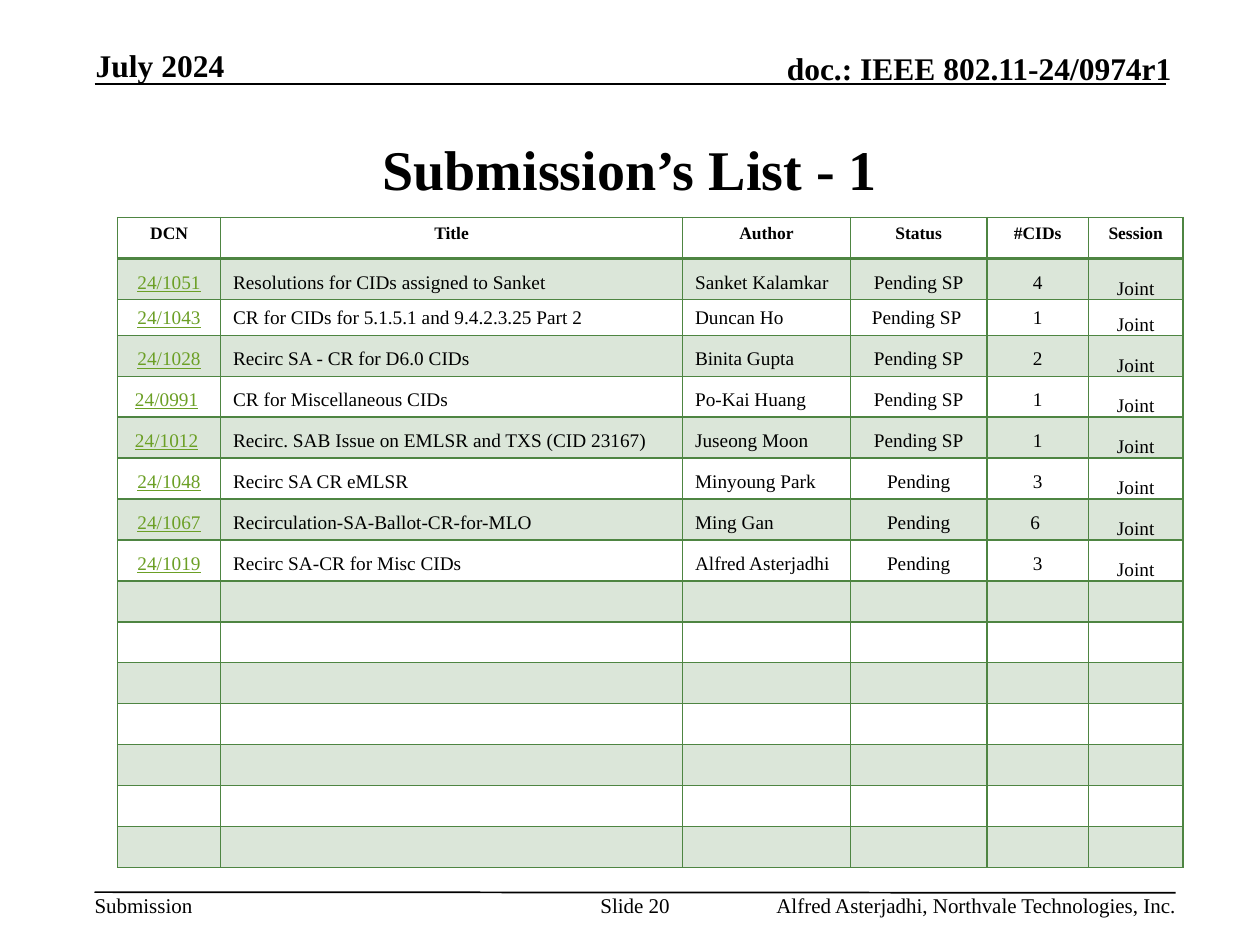
import pptx
import pptx.util
import pptx.dml.color
import pptx.enum.text
import pptx.enum.shapes
import lxml.etree

Pt = pptx.util.Pt
Align = pptx.enum.text.PP_ALIGN
Anchor = pptx.enum.text.MSO_ANCHOR
NS = "http://schemas.openxmlformats.org/drawingml/2006/main"
FONT = "Times New Roman"
BLACK, GREEN, LINK = "000000", "4E8542", "6B9F25"
LEFT, MID, RIGHT = Align.LEFT, Align.CENTER, Align.RIGHT
TOP, CORE, BASE = Anchor.TOP, Anchor.MIDDLE, Anchor.BOTTOM

RULES = [(54, 48.2, 666, 48.2), (54, 509.8, 671.8, 510.2)]
TEXTS = [
    ("Submission", (54, 509.8, 56.2, 14.4), 12, False, LEFT, TOP),
    ("doc.: IEEE 802.11-24/0974r1", (393.8, 28.1, 275.8, 21.6), 18, True, RIGHT, BASE),
    ("Submission’s List - 1", (54, 54.4, 612, 83.5), 32, True, MID, CORE),
    ("July 2024", (54.7, 26.2, 147.6, 21.6), 18, True, LEFT, BASE),
    ("Alfred Asterjadhi, Northvale Technologies, Inc.", (421.9, 509.8, 250.2, 14.4), 12, False, RIGHT, TOP),
    ("Slide 20", (342, 509.8, 41.8, 28.8), 12, False, MID, TOP),
]
HEADS = ["DCN", "Title", "Author", "Status", "#CIDs", "Session"]
ITEMS = [
    ("24/1051", "Resolutions for CIDs assigned to Sanket", "Sanket Kalamkar", "Pending SP", "4"),
    ("24/1043", "CR for CIDs for 5.1.5.1 and 9.4.2.3.25 Part 2", "Duncan Ho", "Pending SP ", "1"),
    ("24/1028", "Recirc SA - CR for D6.0 CIDs", "Binita Gupta", "Pending SP", "2"),
    ("24/0991 ", "CR for Miscellaneous CIDs", "Po-Kai Huang", "Pending SP", "1"),
    ("24/1012 ", "Recirc. SAB Issue on EMLSR and TXS (CID 23167)", "Juseong Moon", "Pending SP", "1"),
    ("24/1048", "Recirc SA CR eMLSR", "Minyoung Park", "Pending", "3"),
    ("24/1067", "Recirculation-SA-Ballot-CR-for-MLO", "Ming Gan", "Pending", "6 "),
    ("24/1019", "Recirc SA-CR for Misc CIDs", "Alfred Asterjadhi", "Pending", "3"),
]
SPARE = 7
SESSION = "Joint"
ALIGNS = [MID, LEFT, LEFT, MID, MID, MID]
WIDTHS = [58.8, 264, 96, 78, 58, 54]
TALL, SHORT, TIGHT = 23.4, 19.4, 2


def color(code):
    return pptx.dml.color.RGBColor.from_string(code)


def add_run(para, text, size, bold=False, code=BLACK, under=False):
    run = para.add_run()
    run.text = text
    font = run.font
    font.name, font.size, font.bold, font.underline = FONT, Pt(size), bold, under
    font.color.rgb = color(code)


def add_text(slide, text, area, size, bold, align, anchor):
    frame = slide.shapes.add_textbox(*map(Pt, area)).text_frame
    frame.margin_left = frame.margin_right = frame.margin_top = frame.margin_bottom = 0
    frame.word_wrap = True
    frame.vertical_anchor = anchor
    para = frame.paragraphs[0]
    para.alignment = align
    add_run(para, text, size, bold)


def add_rule(slide, ends):
    kind = pptx.enum.shapes.MSO_CONNECTOR.STRAIGHT
    rule = slide.shapes.add_connector(kind, *map(Pt, ends))
    rule.line.color.rgb = color(BLACK)
    rule.line.width = Pt(1)
    lxml.etree.SubElement(rule._element.spPr, f"{{{NS}}}effectLst")


def add_edges(cell, row):
    props = cell._tc.get_or_add_tcPr()
    wide = {"T": row == 1, "B": row == 0}
    for spot, side in enumerate("LRTB"):
        width = Pt(2 if wide.get(side) else 1)
        props.insert(spot, lxml.etree.fromstring(
            f'<a:ln{side} xmlns:a="{NS}" w="{width}"><a:solidFill>'
            f'<a:srgbClr val="{GREEN}"/></a:solidFill></a:ln{side}>'))


def fill_cell(cell, row):
    if row % 2 == 0:
        cell.fill.background()
        return
    cell.fill.solid()
    cell.fill.fore_color.rgb = color(GREEN)
    tint = cell._tc.tcPr.find(f".//{{{NS}}}srgbClr")
    lxml.etree.SubElement(tint, f"{{{NS}}}alpha").set("val", "20000")


def write_cell(cell, text, row, col):
    para = cell.text_frame.paragraphs[0]
    if not text:
        para._p.get_or_add_endParaRPr().set("sz", "1100")
        return
    para.alignment = MID if row == 0 else ALIGNS[col]
    if row == 0:
        add_run(para, text, 10, True)
        return
    cell.vertical_anchor = BASE
    if col == 0:
        add_run(para, text.strip(), 11, code=LINK, under=True)
        if text.endswith(" "):
            add_run(para, " ", 11)
    else:
        add_run(para, text, 11)
    if col == len(HEADS) - 1:
        cell.margin_left = cell.margin_right = cell.margin_top = cell.margin_bottom = 0


def add_list(slide):
    rows = [HEADS] + [item + (SESSION,) for item in ITEMS] + [[""] * len(HEADS)] * SPARE
    highs = [SHORT if row == TIGHT else TALL for row in range(len(rows))]
    size = (67.2, 124.4, sum(WIDTHS), sum(highs))
    table = slide.shapes.add_table(len(rows), len(HEADS), *map(Pt, size)).table
    table.horz_banding = table.first_row = False
    for col, width in enumerate(WIDTHS):
        table.columns[col].width = Pt(width)
    for row, texts in enumerate(rows):
        table.rows[row].height = Pt(highs[row])
        for col, text in enumerate(texts):
            cell = table.cell(row, col)
            fill_cell(cell, row)
            write_cell(cell, text, row, col)
            add_edges(cell, row)


def main():
    deck = pptx.Presentation()
    deck.slide_width, deck.slide_height = Pt(720), Pt(540)
    slide = deck.slides.add_slide(deck.slide_layouts[6])
    for ends in RULES:
        add_rule(slide, ends)
    for entry in TEXTS:
        add_text(slide, *entry)
    add_list(slide)
    deck.save("out.pptx")


if __name__ == "__main__":
    main()
